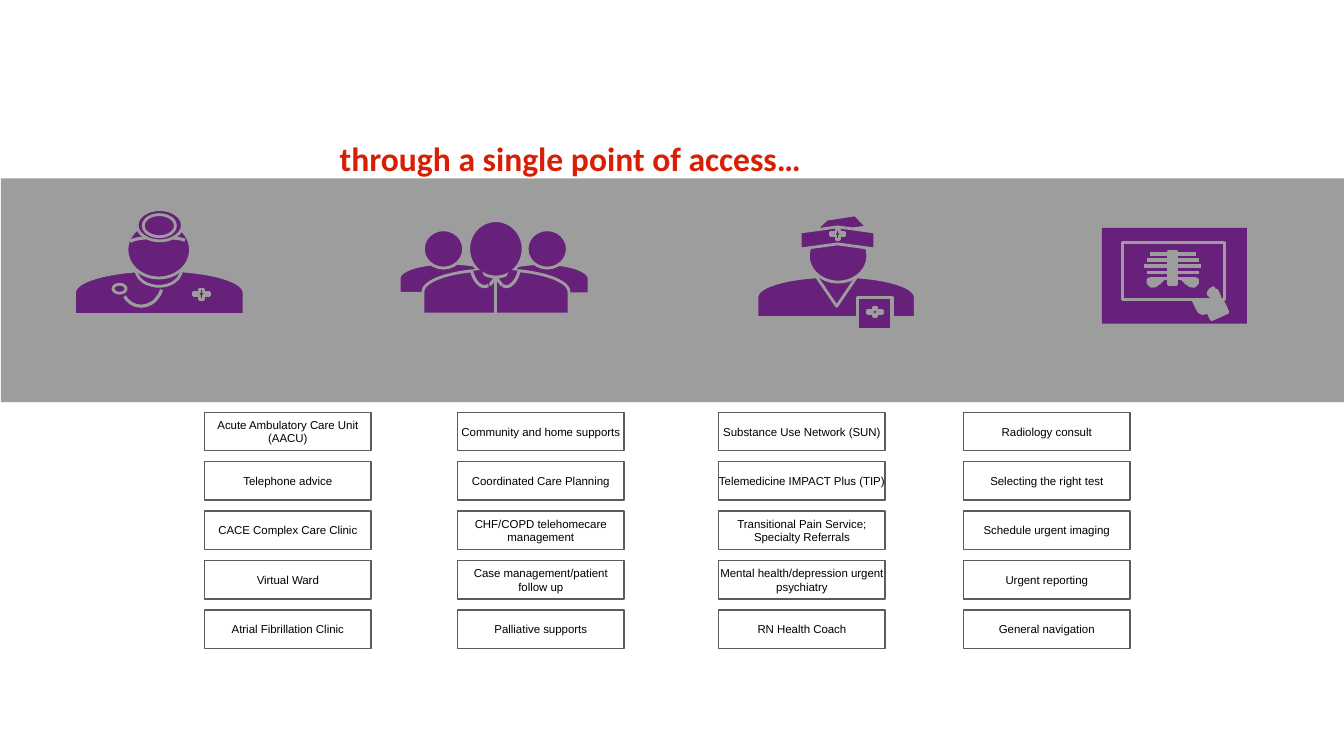
import pptx
import pptx.dml.color
import pptx.enum.shapes
import pptx.enum.text
import pptx.util
from lxml import etree

Pt = pptx.util.Pt
SHAPE = pptx.enum.shapes.MSO_SHAPE
GREY, PURPLE, RED, WHITE, BLACK, EDGE = "9D9D9D", "68217A", "D81E05", "FFFFFF", "000000", "5C5C5C"

SERVICES = [
    (146.2, ["Acute Ambulatory Care Unit (AACU)", "Telephone advice", "CACE Complex Care Clinic",
             "Virtual Ward", "Atrial Fibrillation Clinic"]),
    (326.9, ["Community and home supports", "Coordinated Care Planning",
             "CHF/COPD telehomecare management", "Case management/patient follow up",
             "Palliative supports"]),
    (513.4, ["Substance Use Network (SUN)", "Telemedicine IMPACT Plus (TIP)",
             "Transitional Pain Service;\vSpecialty Referrals",
             "Mental health/depression urgent psychiatry", "RN Health Coach"]),
    (688.3, ["Radiology consult", "Selecting the right test", "Schedule urgent imaging",
             "Urgent reporting", "General navigation"]),
]


def color(value):
    return pptx.dml.color.RGBColor.from_string(value)


def paint(shape, fill, line=None, weight=2):
    shape.shadow.inherit = False
    shape.fill.solid()
    shape.fill.fore_color.rgb = color(fill)
    if line:
        shape.line.color.rgb = color(line)
        shape.line.width = Pt(weight)
    else:
        shape.line.fill.background()


def add_part(page, origin, kind, place, turn=0, adjust=(), flip=False,
             fill=PURPLE, line=GREY, weight=2):
    left, top, width, height = place
    shape = page.shapes.add_shape(kind, Pt(origin[0] + left), Pt(origin[1] + top),
                                  Pt(width), Pt(height))
    for index, value in enumerate(adjust):
        shape.adjustments[index] = value
    shape.rotation = turn
    if flip:
        shape._element.spPr.xfrm.set("flipH", "1")
    paint(shape, fill, line, weight)
    return shape


def add_stroke(page, origin, start, end):
    left, top = origin
    stroke = page.shapes.add_connector(
        pptx.enum.shapes.MSO_CONNECTOR.STRAIGHT,
        Pt(left + start[0]), Pt(top + start[1]), Pt(left + end[0]), Pt(top + end[1]))
    stroke.line.color.rgb = color(GREY)
    stroke.line.width = Pt(2.25)
    namespace = "{http://schemas.openxmlformats.org/drawingml/2006/main}"
    etree.SubElement(stroke._element.spPr, namespace + "effectLst")


def add_shoulders(page, origin, place):
    add_part(page, origin, SHAPE.FLOWCHART_DELAY, place, 270)


def add_doctor(page, origin):
    add_shoulders(page, origin, (44.6, -1.4, 31.7, 121))
    for head_part in [(43.9, 31, 32.4, 23.8), (37.4, 8.6, 45.4, 40.3)]:
        add_part(page, origin, SHAPE.OVAL, head_part)
    add_part(page, origin, SHAPE.ARC, (33.8, 37.4, 28.8, 31.7), 196, (138.36, 0), True, weight=2.25)
    add_part(page, origin, SHAPE.OVAL, (27.4, 53.3, 9.4, 6.5))
    add_part(page, origin, SHAPE.MATH_PLUS, (82.8, 55.4, 15.8, 10.1))
    add_part(page, origin, SHAPE.ARC, (56.9, 2.9, 6.5, 40.3), 270, (162, 51.79), weight=2.25)
    for mirror in [(44.6, 0, 32.4, 22.3), (49, 3.6, 23, 15.8)]:
        add_part(page, origin, SHAPE.OVAL, mirror)


def add_team(page, origin):
    people = [((24.5, 5.8, 21.6, 70.6), (17.3, 6.5, 28.8, 27.4)),
              ((91.4, 7.9, 21.6, 67), (91.4, 6.5, 28.8, 27.4)),
              ((53.3, -1.4, 31.7, 104.4), (49.7, 0, 38.9, 40.3))]
    for shoulders, head in people:
        add_shoulders(page, origin, shoulders)
        add_part(page, origin, SHAPE.OVAL, head)
    for collar_end in [(69.1, 66.2), (73.4, 46.1), (64.8, 46.1)]:
        add_stroke(page, origin, (69.1, 40.3), collar_end)
    for left, turn, flip in [(51.8, 164, False), (72, 196, True)]:
        add_part(page, origin, SHAPE.ARC, (left, 23, 13.7, 24.5), turn, (156.69, 6.41), flip,
                 weight=2.25)


def add_nurse(page, origin):
    add_shoulders(page, origin, (41.8, 7.2, 29.5, 113))
    add_part(page, origin, SHAPE.ISOSCELES_TRIANGLE, (41.8, 48.2, 30.2, 22.3), 180)
    add_part(page, origin, SHAPE.OVAL, (36.7, 15.8, 42.5, 37.4))
    add_part(page, origin, SHAPE.RECTANGLE, (72, 64.1, 24.5, 23), weight=2.25)
    add_part(page, origin, SHAPE.DIAGONAL_STRIPE, (46.1, 0, 23.8, 33.8), 46.1)
    add_part(page, origin, SHAPE.CHEVRON, (49.7, -5, 15.8, 53.3), 270, (0.23,))
    for left, top in [(50.4, 14.4), (77, 69.8)]:
        add_part(page, origin, SHAPE.MATH_PLUS, (left, top, 14.4, 9.4))


def add_lung(page, origin, center, side):
    outline = [(6.8, 36.7), (8.3, 38.3), (9.7, 39.6), (12.6, 41.6), (15.5, 41.8),
               (17.6, 39.6), (17.6, 36.7)]
    points = [(Pt(origin[0] + center + side * across), Pt(origin[1] + down))
              for across, down in outline]
    builder = page.shapes.build_freeform(*points[0])
    builder.add_line_segments(points[1:], close=True)
    paint(builder.convert_to_shape(), GREY, GREY)


def add_xray(page, origin):
    center = 50.7
    add_part(page, origin, SHAPE.RECTANGLE, (0, 0, 103.7, 68.4), line=None)
    add_part(page, origin, SHAPE.ROUND_2_SAME_RECTANGLE, (67, 47.5, 19.4, 11.5), 154.8,
             (0.35, 0), fill=GREY)
    add_part(page, origin, SHAPE.RECTANGLE, (15.1, 10.8, 72.7, 40.3), weight=2.25)
    add_part(page, origin, SHAPE.RECTANGLE, (76.3, 56.2, 13, 7.2), 336, fill=GREY)
    add_part(page, origin, SHAPE.CHORD, (75.6, 42.5, 10.8, 5.8), 335.9, (54.5, 162), fill=GREY)
    add_part(page, origin, SHAPE.RECTANGLE, (77.8, 45.4, 5.8, 5.8), 245.3, fill=GREY)
    for row, reach in enumerate([16.6, 18.4, 20.2, 18.4, 16.6]):
        level = 18.7 + 4.32 * row
        add_stroke(page, origin, (center - reach, level), (center + reach, level))
    add_part(page, origin, SHAPE.RECTANGLE, (47.5, 16.6, 5.8, 23.8), fill=GREY)
    for side in (-1, 1):
        add_lung(page, origin, center, side)


def write(box, text, font, size, ink, margins, bold=False):
    frame = box.text_frame
    frame.word_wrap = True
    frame.vertical_anchor = pptx.enum.text.MSO_ANCHOR.MIDDLE
    frame.margin_left = frame.margin_right = Pt(margins[0])
    frame.margin_top = frame.margin_bottom = Pt(margins[1])
    frame.text = text
    para = frame.paragraphs[0]
    for span in para.runs:
        span.font.name = font
        span.font.size = Pt(size)
        span.font.bold = bold
        span.font.color.rgb = color(ink)
    return para


def add_title(page, left, top, width, height):
    box = page.shapes.add_textbox(Pt(left), Pt(top), Pt(width), Pt(height))
    write(box, "through a single point of access…", "Calibri", 24, RED, (5.04, 2.88), True)


def add_banner(page, left, top, width, height):
    add_part(page, (left, top), SHAPE.RECTANGLE, (0, 0, width, height), fill=GREY, line=None)
    icons = [(add_doctor, 52.6, 22.3), (add_team, 284.4, 30.2),
             (add_nurse, 540, 20.9), (add_xray, 786.3, 35.3)]
    for add_icon, across, down in icons:
        add_icon(page, (left + across, top + down))


def add_services(page, left, top, services):
    for row, service in enumerate(services):
        card = add_part(page, (left, top), SHAPE.RECTANGLE, (0, 35.3 * row, 118.8, 27.4),
                        fill=WHITE, line=EDGE, weight=1)
        para = write(card, service, "Arial", 8.2, BLACK, (0, 3.6))
        para.alignment = pptx.enum.text.PP_ALIGN.CENTER


def main():
    deck = pptx.Presentation()
    deck.slide_width, deck.slide_height = Pt(960), Pt(540)
    page = deck.slides.add_slide(deck.slide_layouts[6])
    add_banner(page, 0.7, 127.4, 959.3, 160)
    for left, services in SERVICES:
        add_services(page, left, 294.5, services)
    add_title(page, 237.6, 91.4, 486, 43.2)
    deck.save("out.pptx")


if __name__ == "__main__":
    main()
